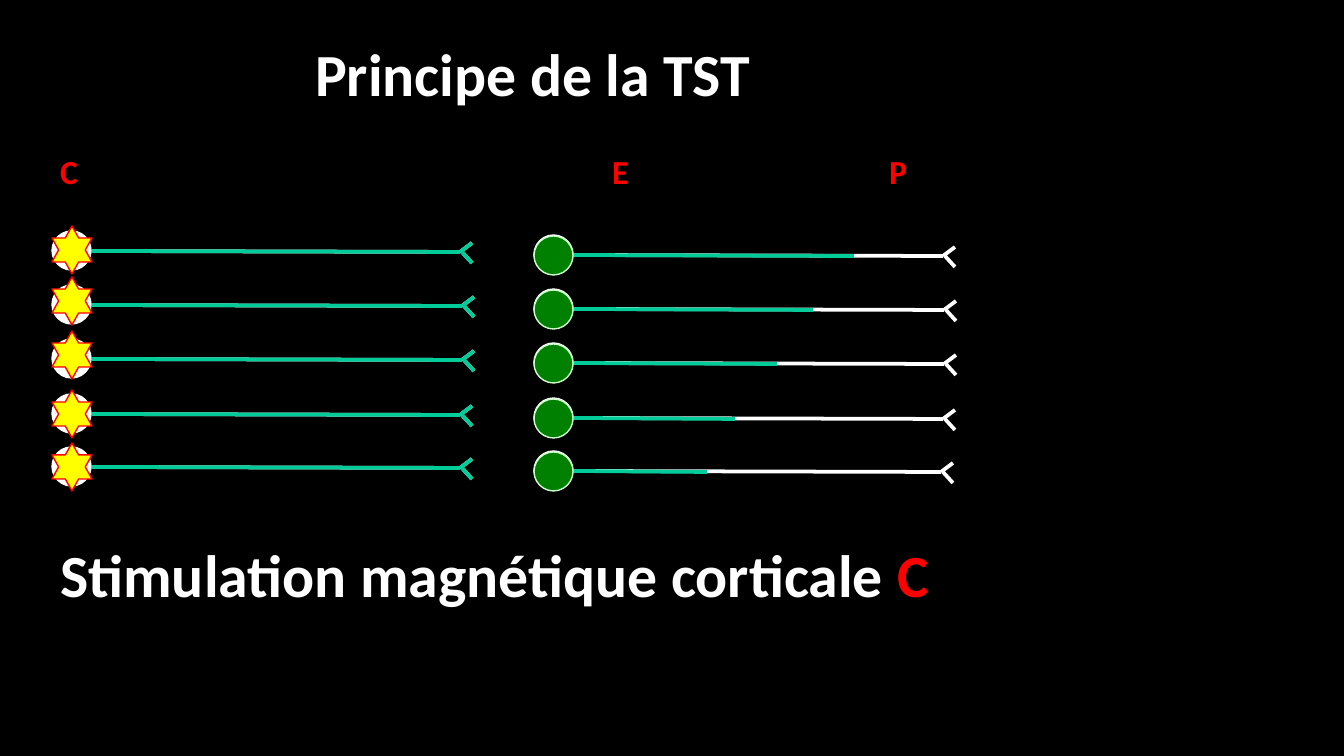
"""Build the slide on the principle of the TST: cortical stimulation along five motor pathways."""
import pptx
import pptx.dml.color
import pptx.enum.shapes
import pptx.oxml.ns
import pptx.util
import lxml.etree

PX = 914400 / 134.4
BLACK = pptx.dml.color.RGBColor(0x00, 0x00, 0x00)
WHITE = pptx.dml.color.RGBColor(0xFF, 0xFF, 0xFF)
RED = pptx.dml.color.RGBColor(0xFF, 0x00, 0x00)
YELLOW = pptx.dml.color.RGBColor(0xFF, 0xFF, 0x00)
TEAL = pptx.dml.color.RGBColor(0x00, 0xCC, 0x99)
GREEN = pptx.dml.color.RGBColor(0x00, 0x80, 0x00)
PALE_GREEN = pptx.dml.color.RGBColor(0xCC, 0xFF, 0xCC)
OVAL = pptx.enum.shapes.MSO_SHAPE.OVAL
STAR = pptx.enum.shapes.MSO_SHAPE.STAR_6_POINT

deck = pptx.Presentation()
deck.slide_width = round(1344 * PX)
deck.slide_height = round(756 * PX)
slide = deck.slides.add_slide(deck.slide_layouts[6])
slide.background.fill.solid()
slide.background.fill.fore_color.rgb = BLACK


def draw_body(kind, left, top, width, height, fill, outline):
    body = slide.shapes.add_shape(kind, *(round(v * PX) for v in (left, top, width, height)))
    body.shadow.inherit = False
    body.fill.solid()
    body.fill.fore_color.rgb = fill
    body.line.color.rgb = outline
    body.line.width = pptx.util.Pt(0.75)


def draw_fibre(x1, y1, x2, y2, color):
    fibre = slide.shapes.add_connector(
        pptx.enum.shapes.MSO_CONNECTOR.STRAIGHT, *(round(v * PX) for v in (x1, y1, x2, y2)))
    fibre.line.color.rgb = color
    fibre.line.width = pptx.util.Pt(2)
    lxml.etree.SubElement(fibre._element.spPr, pptx.oxml.ns.qn("a:effectLst"))


pathways = [
    (251, 226, 460, 943, 854),
    (305, 277, 462, 944, 813),
    (359, 331, 462, 944, 777),
    (414, 390, 460, 943, 735),
    (467, 443, 460, 941, 707),
]
for axis, star_top, cortical_end, spinal_end, front in pathways:
    spinal_axis = axis + 4
    draw_body(OVAL, 52, axis - 20, 39, 39, WHITE, WHITE)
    draw_body(OVAL, 534, spinal_axis - 20, 39, 39, WHITE, WHITE)
    for start, end, y, color in (
        (92, cortical_end, axis, WHITE),
        (574, spinal_end, spinal_axis, WHITE),
        (92, cortical_end, axis, TEAL),
    ):
        draw_fibre(start, y, end, y + 1, color)
        draw_fibre(end, y + 1, end + 12, y - 8, color)
        draw_fibre(end + 2, y + 1, end + 12, y + 12, color)
    draw_body(STAR, 52, star_top, 40, 48, YELLOW, RED)
    draw_body(OVAL, 534, axis - 15, 39, 39, GREEN, PALE_GREEN)
    draw_fibre(574, spinal_axis, front, spinal_axis + 1, TEAL)

captions = [
    (47, 144, 46, 54, 18, [("C", RED)]),
    (599, 144, 44, 54, 18, [("E", RED)]),
    (876, 144, 46, 54, 18, [("P", RED)]),
    (302, 30, 466, 86, 32, [("Principe de la TST", WHITE)]),
    (47, 531, 905, 86, 32, [("Stimulation magnétique corticale ", WHITE), ("C", RED)]),
]
for left, top, width, height, size, pieces in captions:
    caption = slide.shapes.add_textbox(*(round(v * PX) for v in (left, top, width, height)))
    caption.text_frame.word_wrap = False
    for wording, color in pieces:
        run = caption.text_frame.paragraphs[0].add_run()
        run.text = wording
        run.font.name = "Calibri"
        run.font.size = pptx.util.Pt(size)
        run.font.bold = True
        run.font.color.rgb = color

deck.save("out.pptx")
